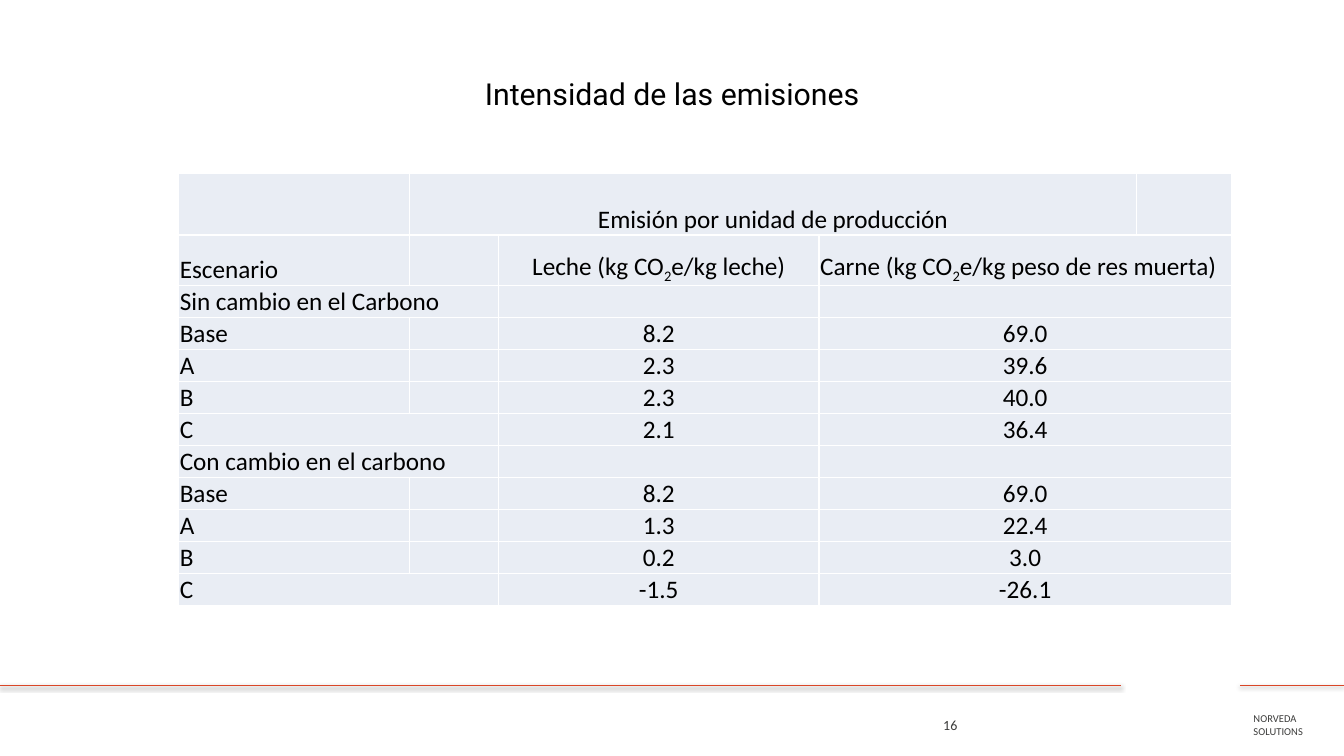
"""Builds the slide on emission intensity per unit of production."""
from lxml import etree
from pptx import Presentation
from pptx.dml.color import RGBColor
from pptx.enum.shapes import MSO_CONNECTOR
from pptx.enum.text import MSO_ANCHOR, PP_ALIGN
from pptx.oxml import parse_xml
from pptx.oxml.ns import nsdecls, qn
from pptx.util import Cm, Pt

STRAIGHT = MSO_CONNECTOR.STRAIGHT
LEFT, CENTER = PP_ALIGN.LEFT, PP_ALIGN.CENTER
MIDDLE, BOTTOM = MSO_ANCHOR.MIDDLE, MSO_ANCHOR.BOTTOM

COLUMN_WIDTHS = [5.82, 2.24, 8.08, 8.0, 2.39]
ROW_HEIGHTS = [1.55, 1.27] + [0.79] * 10
MILK_HEADER = ["Leche (kg CO", "2", "e/kg leche)"]
MEAT_HEADER = ["Carne (kg CO", "2", "e/kg peso de res muerta)"]
SCENARIOS = [
    ("Sin cambio en el Carbono", "", ""),
    ("Base", "8.2", "69.0"),
    ("A", "2.3", "39.6"),
    ("B", "2.3", "40.0"),
    ("C", "2.1", "36.4"),
    ("Con cambio en el carbono", "", ""),
    ("Base", "8.2", "69.0"),
    ("A", "1.3", "22.4"),
    ("B", "0.2", "3.0"),
    ("C", "-1.5", "-26.1"),
]


def color(hex_code):
    """Turn a hex string into a colour."""
    return RGBColor.from_string(hex_code)


class SlideBuilder:
    """Holds the style and the current slide."""

    BODY_FONT, TITLE_FONT = "Calibri", "Roboto"
    INK, FOOTER_INK, RULE = "000000", "3C3C3B", "DA4627"
    CELL_FILL, CELL_BORDER = "E9EDF4", "FFFFFF"

    def __init__(self, presentation):
        """Add a title-only slide."""
        self.slide = presentation.slides.add_slide(presentation.slide_layouts[5])

    def style(self, paragraph, size, ink, font, align):
        """Format a paragraph and its runs."""
        paragraph.alignment = align
        for run in paragraph.runs:
            run.font.size = Pt(size)
            run.font.name = font
            run.font.color.rgb = color(ink)

    def title(self, wording, left, top, width, height):
        """Place and format the title placeholder."""
        title = self.slide.shapes.title
        title.left, title.top = Cm(left), Cm(top)
        title.width, title.height = Cm(width), Cm(height)
        title.text_frame.text = wording
        title.text_frame.vertical_anchor = MIDDLE
        self.style(title.text_frame.paragraphs[0], 21.6, self.INK, self.TITLE_FONT, CENTER)

    def rule(self, start, end, height):
        """Draw a horizontal rule with a soft shadow."""
        rule = self.slide.shapes.add_connector(
            STRAIGHT, Cm(start), Cm(height), Cm(end), Cm(height))
        rule.line.color.rgb = color(self.RULE)
        rule.line.width = Pt(0.75)
        rule._element.spPr.append(parse_xml(
            f'<a:effectLst {nsdecls("a")}>'
            f'<a:outerShdw blurRad="{Pt(3.1)}" dist="{Pt(1.6)}" dir="5400000" rotWithShape="0">'
            '<a:srgbClr val="000000"><a:alpha val="38000"/></a:srgbClr>'
            '</a:outerShdw></a:effectLst>'))

    def label(self, wording, size, left, top, width, height):
        """Add a footer label."""
        label = self.slide.shapes.add_textbox(Cm(left), Cm(top), Cm(width), Cm(height))
        frame = label.text_frame
        frame.word_wrap = True
        frame.vertical_anchor = MIDDLE
        frame.text = wording
        self.style(frame.paragraphs[0], size, self.FOOTER_INK, self.BODY_FONT, LEFT)

    def table(self, left, top, widths, heights):
        """Add a table with plain filled cells."""
        table = self.slide.shapes.add_table(
            len(heights), len(widths), Cm(left), Cm(top),
            Cm(sum(widths)), Cm(sum(heights))).table
        table.first_row = table.horz_banding = False
        for column, width in zip(table.columns, widths):
            column.width = Cm(width)
        for row, height in zip(table.rows, heights):
            row.height = Cm(height)
        for cell in table.iter_cells():
            cell.margin_left = cell.margin_right = cell.margin_top = Cm(0.03)
            cell.margin_bottom = 0
            cell.vertical_anchor = BOTTOM
            self.borders(cell)
            cell.fill.solid()
            cell.fill.fore_color.rgb = color(self.CELL_FILL)
        return table

    def borders(self, cell):
        """Draw all four borders of a cell."""
        properties = cell._tc.get_or_add_tcPr()
        for side in ("a:lnL", "a:lnR", "a:lnT", "a:lnB"):
            border = etree.SubElement(properties, qn(side), w=str(Pt(1)))
            fill = etree.SubElement(border, qn("a:solidFill"))
            etree.SubElement(fill, qn("a:srgbClr"), val=self.CELL_BORDER)

    def fill_cell(self, cell, pieces, align):
        """Fill a cell with text whose second piece, if any, is a subscript."""
        paragraph = cell.text_frame.paragraphs[0]
        for piece in pieces:
            paragraph.add_run().text = piece
        self.style(paragraph, 18, self.INK, self.BODY_FONT, align)
        for subscript in paragraph.runs[1:2]:
            subscript._r.get_or_add_rPr().set("baseline", "-25000")


def main():
    """Build and save the slide."""
    presentation = Presentation()
    presentation.slide_width, presentation.slide_height = Cm(33.87), Cm(19.05)
    builder = SlideBuilder(presentation)

    builder.rule(33.87, 31.24, 17.27)
    builder.rule(28.24, 0, 17.27)
    builder.title("Intensidad de las emisiones", 1.7, 0.76, 30.48, 3.18)

    emissions = builder.table(4.5, 4.37, COLUMN_WIDTHS, ROW_HEIGHTS)
    emissions.cell(0, 1).merge(emissions.cell(0, 3))
    builder.fill_cell(emissions.cell(0, 1), ["Emisión por unidad de producción"], CENTER)

    emissions.cell(1, 3).merge(emissions.cell(1, 4))
    builder.fill_cell(emissions.cell(1, 0), ["Escenario"], LEFT)
    builder.fill_cell(emissions.cell(1, 2), MILK_HEADER, CENTER)
    builder.fill_cell(emissions.cell(1, 3), MEAT_HEADER, LEFT)

    for row, (scenario, milk, meat) in enumerate(SCENARIOS, start=2):
        emissions.cell(row, 3).merge(emissions.cell(row, 4))
        if scenario == "C" or not milk:
            emissions.cell(row, 0).merge(emissions.cell(row, 1))
        builder.fill_cell(emissions.cell(row, 0), [scenario], LEFT)
        if milk:
            builder.fill_cell(emissions.cell(row, 2), [milk], CENTER)
            builder.fill_cell(emissions.cell(row, 3), [meat], CENTER)

    builder.label("NORVEDA SOLUTIONS", 7.5, 31.34, 17.75, 2.08, 1.02)
    builder.label("16", 10, 23.52, 17.75, 1.55, 1.02)
    presentation.save("out.pptx")


if __name__ == "__main__":
    main()
